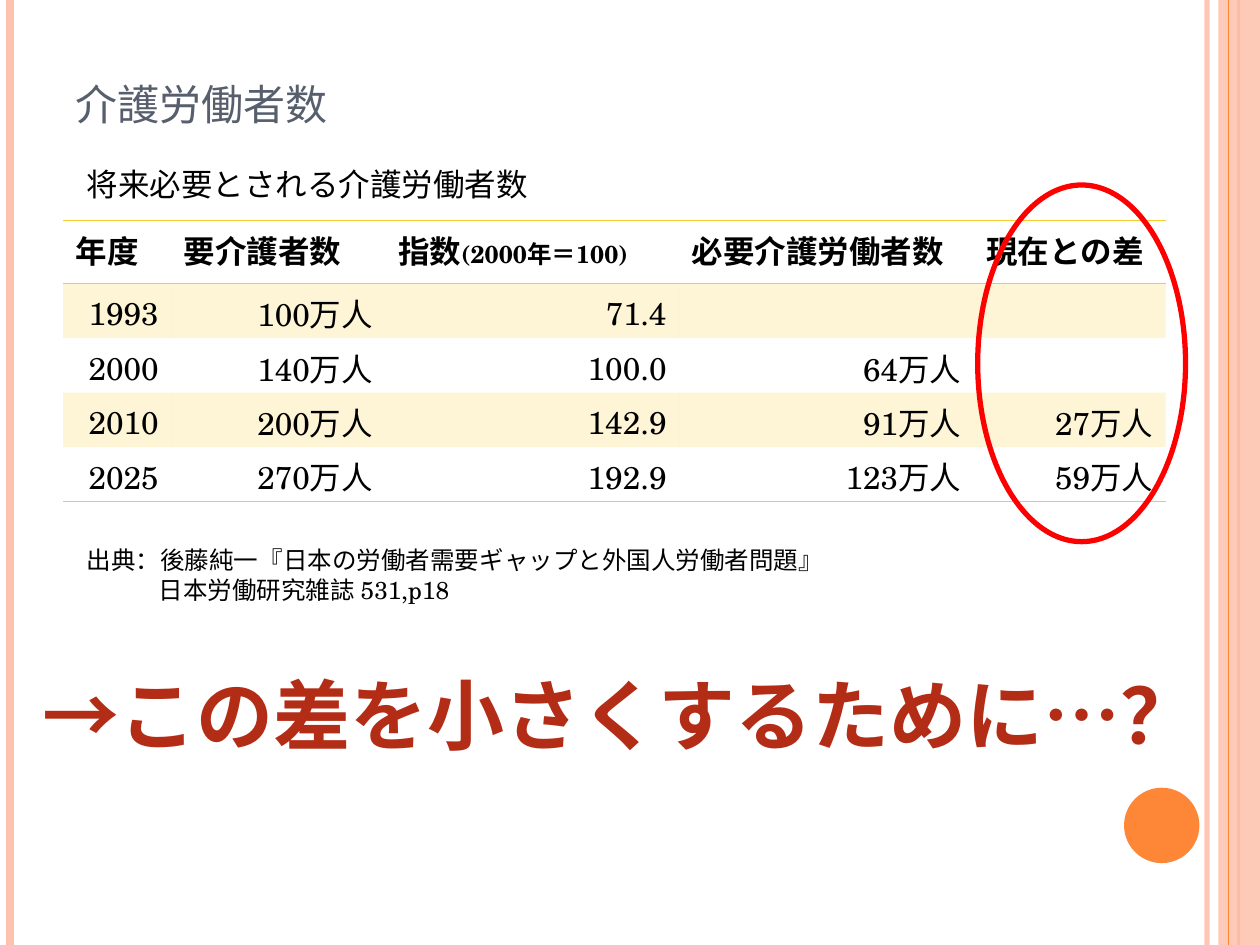
from collections import namedtuple

from lxml.etree import SubElement
from pptx import Presentation
from pptx.dml.color import RGBColor
from pptx.enum.shapes import MSO_CONNECTOR as Connector, MSO_SHAPE as Shape
from pptx.enum.text import MSO_ANCHOR as Anchor, MSO_AUTO_SIZE as AutoSize, PP_ALIGN as Align
from pptx.oxml.ns import qn
from pptx.util import Cm, Pt

Box = namedtuple("Box", "left top width height")

SERIF = "TeX Gyre Schola"
BLACK, RED, BRICK, SLATE = "000000", "FF0000", "B32C16", "575F6D"
ORANGE, PEACH, GOLD = "FE8637", "FEC3AE", "F5CD2D"
PLAIN_TABLE = "{2D5ABB26-0587-4C30-8999-92F81FD0307C}"

COLUMN_WIDTHS = [2.18, 4.32, 5.92, 5.94, 3.87]
HEADINGS = ["年度", "要介護者数", "指数", "必要介護労働者数", "現在との差"]
INDEX_BASE = "(2000年＝100)"
FIGURES = [
    ["1993", "100万人", "71.4", "", ""],
    ["2000", "140万人", "100.0", "64万人", ""],
    ["2010", "200万人", "142.9", "91万人", "27万人"],
    ["2025", "270万人", "192.9", "123万人", "59万人"],
]


def paint(color_format, color):
    """Set a colour format from a hex string."""
    color_format.rgb = RGBColor.from_string(color)


def fill_solid(fill, color, opacity=100):
    """Fill with a colour, optionally translucent."""
    fill.solid()
    paint(fill.fore_color, color)
    if opacity < 100:
        srgb = next(fill._xPr.iter(qn("a:srgbClr")))
        SubElement(srgb, qn("a:alpha"), val=str(opacity * 1000))


def style(span, size, color=BLACK, bold=False, font=SERIF):
    """Format one run."""
    span.font.name = font
    span.font.size = Pt(size)
    span.font.bold = bold
    paint(span.font.color, color)


def place(box):
    """Turn a box in centimetres into lengths."""
    return [Cm(value) for value in box]


def add_rail(page, box, x, width, color, opacity=100):
    """Draw a vertical line down the box at distance x from its left."""
    left = Cm(box.left + x)
    rail = page.shapes.add_connector(
        Connector.STRAIGHT, left, Cm(box.top), left, Cm(box.top + box.height))
    rail.line.width = Pt(width)
    fill_solid(rail.line.fill, color, opacity)
    SubElement(rail._element.spPr, qn("a:effectLst"))


def add_plain_shape(page, kind, box):
    """Add a preset shape without shadow, fill or line."""
    shape = page.shapes.add_shape(kind, *place(box))
    shape.shadow.inherit = False
    shape.fill.background()
    shape.line.fill.background()
    return shape


def add_frame(page, box):
    """Draw the side rails, the band and the dot."""
    add_rail(page, box, 24.33, 3, PEACH, 93)
    add_rail(page, box, 0.2, 4.5, PEACH)
    add_rail(page, box, 24.97, 1.5, ORANGE)
    band = add_plain_shape(
        page, Shape.RECTANGLE, Box(box.left + 24.56, box.top, 0.84, box.height))
    fill_solid(band.fill, PEACH, 87)
    add_rail(page, box, 24.77, 0.75, ORANGE)
    dot = add_plain_shape(
        page, Shape.OVAL, Box(box.left + 22.66, box.top + 15.88, 1.52, 1.52))
    fill_solid(dot.fill, ORANGE)


def add_title(page, box):
    """Place the heading one line above the bottom of its box."""
    frame = page.shapes.add_textbox(*place(box)).text_frame
    frame.word_wrap = True
    frame.vertical_anchor = Anchor.BOTTOM
    frame.margin_bottom = Cm(1.3)
    frame.text = "介護労働者数"
    span = frame.paragraphs[0].runs[0]
    style(span, 30, SLATE, font="Lato")
    span._r.get_or_add_rPr().set("cap", "small")


def add_label(page, box, text, size, color=BLACK, bold=False, align=Align.LEFT):
    """Place unwrapped text and return its paragraphs."""
    frame = page.shapes.add_textbox(*place(box)).text_frame
    frame.word_wrap = False
    frame.auto_size = AutoSize.SHAPE_TO_FIT_TEXT
    frame.text = text
    for para in frame.paragraphs:
        para.alignment = align
        for span in para.runs:
            style(span, size, color, bold)
    return frame.paragraphs


def add_source(page, box):
    """Place the citation with its second line indented."""
    paras = add_label(
        page, box,
        "出典：後藤純一『日本の労働者需要ギャップと外国人労働者問題』\n日本労働研究雑誌 531,p18", 14)
    paras[1]._p.get_or_add_pPr().set("marL", str(Cm(1.45)))


def rule_cell(cell, sides):
    """Draw gold borders on the named sides of a cell."""
    for side in sides:
        line = SubElement(cell._tc.get_or_add_tcPr(), qn(f"a:ln{side}"), w=str(Pt(1)))
        solid = SubElement(line, qn("a:solidFill"))
        SubElement(solid, qn("a:srgbClr"), val=GOLD)


def add_figures(page, box):
    """Build the table of care worker figures."""
    rows = [HEADINGS] + FIGURES
    table = page.shapes.add_table(len(rows), len(HEADINGS), *place(box)).table
    table.first_row = table.horz_banding = False
    next(table._tbl.iter(qn("a:tableStyleId"))).text = PLAIN_TABLE
    for column, width in zip(table.columns, COLUMN_WIDTHS):
        column.width = Cm(width)
    for r, texts in enumerate(rows):
        header = r == 0
        table.rows[r].height = Cm(1.27 if header else (box.height - 1.27) / len(FIGURES))
        sides = "TB" if header else "B" if r == len(FIGURES) else ""
        for c, text in enumerate(texts):
            cell = table.cell(r, c)
            rule_cell(cell, sides)
            if r % 2:
                fill_solid(cell.fill, GOLD, 20)
            else:
                cell.fill.background()
            cell.text = text
            para = cell.text_frame.paragraphs[0]
            para.alignment = Align.LEFT if header else Align.RIGHT
            for span in para.runs:
                style(span, 18, bold=header)
    base = table.cell(0, 2).text_frame.paragraphs[0].add_run()
    base.text = INDEX_BASE
    style(base, 14, bold=True)


def add_highlight(page, box):
    """Ring the column of differences."""
    ring = add_plain_shape(page, Shape.OVAL, box)
    fill_solid(ring.line.fill, RED)
    ring.line.width = Pt(3)


def main():
    """Build and save the slide."""
    deck = Presentation()
    deck.slide_width, deck.slide_height = Cm(25.4), Cm(19.05)
    page = deck.slides.add_slide(deck.slide_layouts[6])
    add_frame(page, Box(0, 0, 25.4, 19.05))
    add_title(page, Box(1.27, 0.76, 20.75, 3.18))
    add_figures(page, Box(1.27, 4.45, 22.23, 5.66))
    add_highlight(page, Box(19.71, 3.73, 4.19, 7.19))
    add_label(page, Box(0.51, 13.34, 24, 2.13), "→この差を小さくするために…？",
              44, BRICK, True, Align.CENTER)
    add_label(page, Box(1.5, 3.2, 9.5, 1.02), "将来必要とされる介護労働者数", 18)
    add_source(page, Box(1.5, 10.87, 15.47, 1.45))
    deck.save("out.pptx")


if __name__ == "__main__":
    main()
